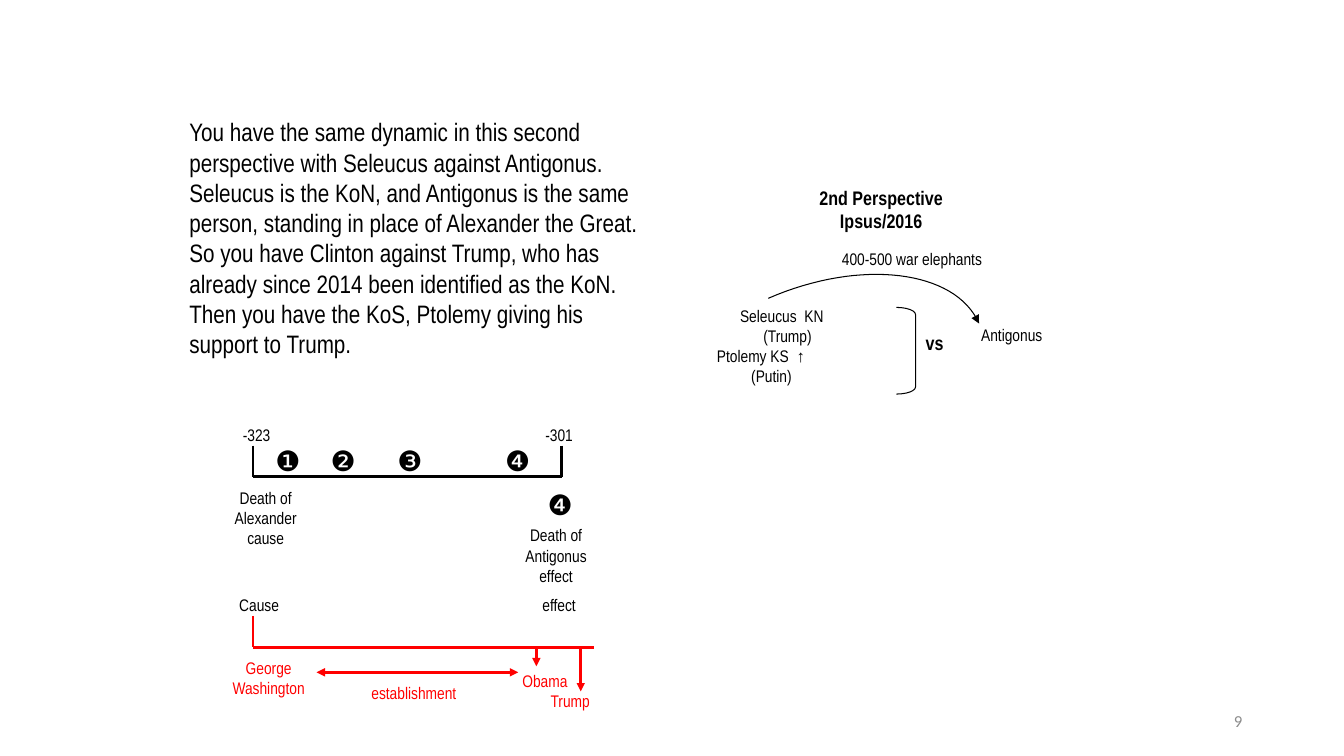
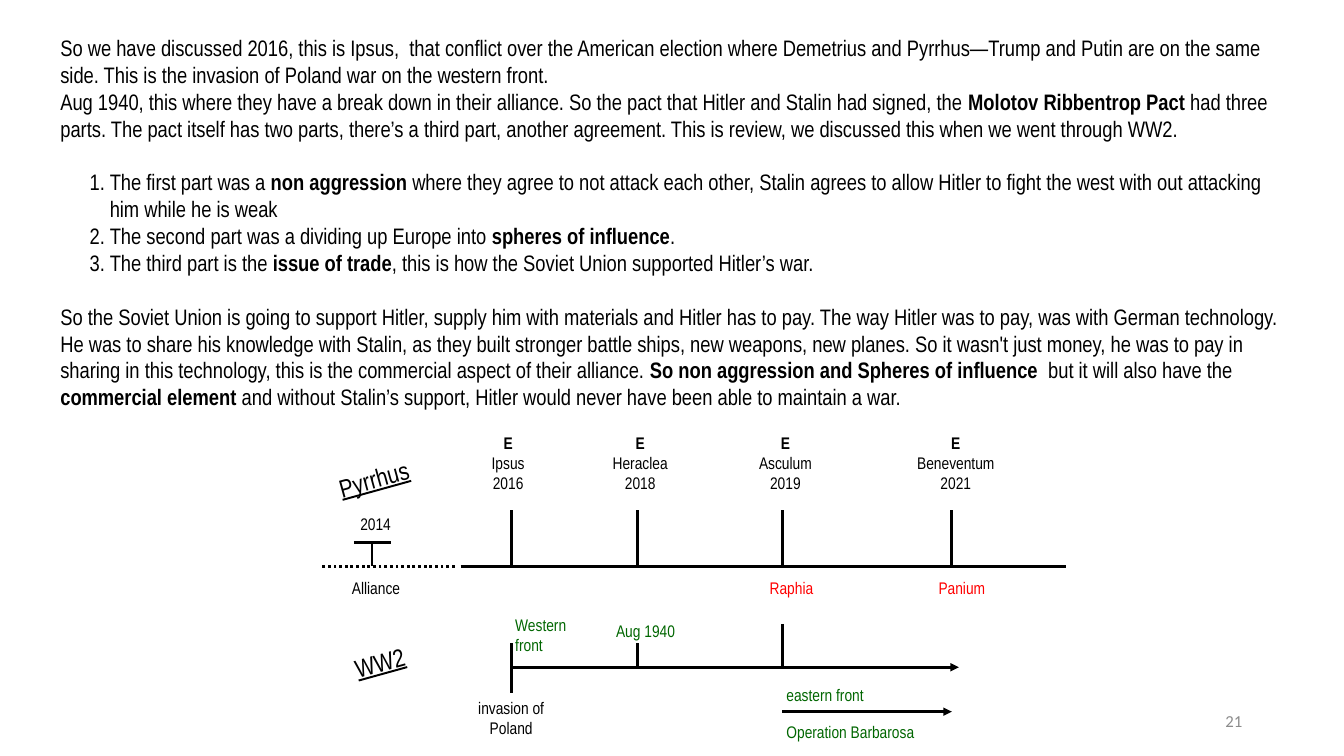
"""Build two slides of battle timelines with commentary."""
from pptx import Presentation
from pptx.dml.color import RGBColor
from pptx.enum.dml import MSO_LINE
from pptx.enum.shapes import MSO_CONNECTOR, MSO_SHAPE
from pptx.enum.text import MSO_ANCHOR, PP_ALIGN
from pptx.oxml.ns import qn
from pptx.util import Inches, Pt
from lxml import etree

LEFT, CENTER, RIGHT = PP_ALIGN.LEFT, PP_ALIGN.CENTER, PP_ALIGN.RIGHT
MIDDLE = MSO_ANCHOR.MIDDLE
STRAIGHT = MSO_CONNECTOR.STRAIGHT
BRACKET = MSO_SHAPE.RIGHT_BRACKET
DOTTED = MSO_LINE.ROUND_DOT

THEME = {
    "black": RGBColor(0, 0, 0),
    "red": RGBColor(255, 0, 0),
    "green": RGBColor(0, 102, 0),
    "gray": RGBColor(140, 140, 140),
    "font": "Arial Narrow",
    "footer_font": "Calibri",
    "symbol_font": "Arial",
    "label": 12,
    "heading": 14,
    "notes": 16,
    "body": 18,
    "symbol": 20,
    "thin": Pt(0.75),
    "thick": Pt(2),
}


def add_text(slide, box, lines, color="black", size="label", align=CENTER,
             font="font", bold=False, inset=0.04):
    """Add a text box with one paragraph per line; ** marks bold runs."""
    shape = slide.shapes.add_textbox(*map(Inches, box))
    frame = shape.text_frame
    frame.word_wrap = True
    frame.margin_left = frame.margin_right = Inches(inset)
    frame.margin_top = frame.margin_bottom = Inches(min(inset, 0.05))
    for index, line in enumerate(lines):
        paragraph = frame.add_paragraph() if index else frame.paragraphs[0]
        paragraph.alignment = align
        paragraph.font.name = THEME[font]
        paragraph.font.size = Pt(THEME[size])
        paragraph.font.color.rgb = THEME[color]
        paragraph.font.bold = bold
        for position, part in enumerate(line.split("**")):
            if part:
                run = paragraph.add_run()
                run.text = part
                if position % 2:
                    run.font.bold = True
    return shape


def add_line(slide, start, end, color="black", arrows=()):
    """Add a straight line with arrowheads at the ends named in arrows."""
    line = slide.shapes.add_connector(STRAIGHT, *map(Inches, start + end))
    line.line.color.rgb = THEME[color]
    line.line.width = THEME["thick"]
    for arrow in arrows:
        etree.SubElement(line.line._get_or_add_ln(), qn(f"a:{arrow}"), type="triangle")
    etree.SubElement(line._element.spPr, qn("a:effectLst"))
    return line


presentation = Presentation()
presentation.slide_width = Inches(13.33)
presentation.slide_height = Inches(7.5)
slides = []
for number in ("9", "21"):
    slide = presentation.slides.add_slide(presentation.slide_layouts[6])
    footer = add_text(slide, (9.42, 6.95, 3, 0.4), [number], "gray",
                      align=RIGHT, font="footer_font", inset=0.1)
    footer.text_frame.vertical_anchor = MIDDLE
    slides.append(slide)
perspective, alliance = slides

add_text(perspective, (1.78, 1.11, 4.67, 2.73), [
    "You have the same dynamic in this second perspective with Seleucus against Antigonus.",
    "Seleucus is the KoN, and Antigonus is the same person, standing in place of Alexander "
    "the Great. So you have Clinton against Trump, who has already since 2014 been "
    "identified as the KoN. Then you have the KoS, Ptolemy giving his support to Trump.",
], size="body", align=LEFT, inset=0.1)

add_text(perspective, (6.82, 1.8, 3.84, 0.59), ["2nd Perspective", "Ipsus/2016"],
         size="heading", bold=True)
add_text(perspective, (9.14, 3.24, 0.42, 0.41), ["vs"], size="heading", align=LEFT, bold=True)
allies = add_text(perspective, (7.07, 2.99, 1.75, 0.95),
                  ["Seleucus  KN", "(Trump)", "Ptolemy KS  **↑**", "(Putin)"], align=LEFT)
for paragraph, indent in zip(allies.text_frame.paragraphs, (0.23, 0.46, 0, 0.34)):
    paragraph._p.get_or_add_pPr().set("marL", str(Inches(indent)))

bracket = perspective.shapes.add_shape(BRACKET, *map(Inches, (8.89, 3.05, 0.19, 0.86)))
bracket.adjustments[0] = 0.37

controls = ((7.62, 2.96), (8.54, 2.56), (9.48, 2.68), (9.71, 3.21))
steps = 32
curve = []
for step in range(steps + 1):
    t = step / steps
    weights = ((1 - t) ** 3, 3 * t * (1 - t) ** 2, 3 * t ** 2 * (1 - t), t ** 3)
    curve.append(tuple(Inches(sum(weight * point[axis] for weight, point in zip(weights, controls)))
                       for axis in (0, 1)))
builder = perspective.shapes.build_freeform(*curve[0])
builder.add_line_segments(curve[1:], close=False)
arc = builder.convert_to_shape()
for shape in (bracket, arc):
    shape.shadow.inherit = False
    shape.fill.background()
    shape.line.color.rgb = THEME["black"]
    shape.line.width = THEME["thin"]
etree.SubElement(arc.line._get_or_add_ln(), qn("a:tailEnd"), type="triangle")

for start, end, color, arrows in (
    ((2.51, 4.73), (5.57, 4.73), "black", ()),
    ((2.51, 4.42), (2.51, 4.73), "black", ()),
    ((5.57, 4.42), (5.57, 4.73), "black", ()),
    ((2.51, 6.42), (5.89, 6.42), "red", ()),
    ((2.51, 6.11), (2.51, 6.42), "red", ()),
    ((3.14, 6.67), (5.14, 6.67), "red", ("headEnd", "tailEnd")),
    ((5.32, 6.42), (5.32, 6.61), "red", ("tailEnd",)),
    ((5.76, 6.42), (5.76, 6.86), "red", ("tailEnd",)),
):
    add_line(perspective, start, end, color, arrows)

for symbol, left, top in (("❶", 2.69, 4.36), ("❷", 3.24, 4.36), ("❸", 3.9, 4.36),
                          ("❹", 4.97, 4.36), ("❹", 5.39, 4.8)):
    add_text(perspective, (left, top, 0.31, 0.38), [symbol],
             size="symbol", align=LEFT, font="symbol_font")

for box, lines, color, align in (
    ((9.62, 3.18, 0.83, 0.54), ["Antigonus"], "black", CENTER),
    ((8.2, 2.43, 1.69, 0.38), ["400-500 war elephants"], "black", CENTER),
    ((2.2, 4.17, 0.69, 0.25), ["-323"], "black", CENTER),
    ((5.2, 4.17, 0.69, 0.25), ["-301"], "black", CENTER),
    ((2.26, 4.8, 0.75, 0.69), ["Death of", "Alexander", "cause"], "black", CENTER),
    ((5.14, 5.17, 0.75, 0.69), ["Death of", "Antigonus", "effect"], "black", CENTER),
    ((2.26, 5.86, 0.62, 0.25), ["Cause"], "black", CENTER),
    ((5.2, 5.86, 0.69, 0.25), ["effect"], "black", CENTER),
    ((2.26, 6.48, 0.81, 0.69), ["George", "Washington"], "red", CENTER),
    ((3.26, 6.73, 1.69, 0.38), ["establishment"], "red", CENTER),
    ((5.14, 6.61, 0.75, 0.25), ["Obama"], "red", LEFT),
    ((5.14, 6.81, 0.75, 0.25), ["Trump"], "red", RIGHT),
):
    add_text(perspective, box, lines, color, align=align)

notes = add_text(alliance, (0.5, 0.29, 12.32, 4.07), [
    "So we have discussed 2016, this is Ipsus,  that conflict over the American election where "
    "Demetrius and Pyrrhus—Trump and Putin are on the same side. This is the invasion of Poland "
    "war on the western front.",
    "Aug 1940, this where they have a break down in their alliance. So the pact that Hitler and "
    "Stalin had signed, the **Molotov Ribbentrop Pact **had three parts. The pact itself has two "
    "parts, there’s a third part, another agreement. This is review, we discussed this when we "
    "went through WW2.",
    "The first part was a **non aggression **where they agree to not attack each other, Stalin "
    "agrees to allow Hitler to fight the west with out attacking him while he is weak",
    "The second part was a dividing up Europe into **spheres of influence**.",
    "The third part is the **issue of trade**, this is how the Soviet Union supported Hitler’s war.",
    "So the Soviet Union is going to support Hitler, supply him with materials and Hitler has to "
    "pay. The way Hitler was to pay, was with German technology. He was to share his knowledge "
    "with Stalin, as they built stronger battle ships, new weapons, new planes. So it wasn't just "
    "money, he was to pay in sharing in this technology, this is the commercial aspect of their "
    "alliance. **So non aggression and Spheres of influence  **but it will also have the "
    "**commercial element **and without Stalin’s support, Hitler would never have been able to "
    "maintain a war.",
], size="notes", align=LEFT, inset=0.1)
paragraphs = notes.text_frame.paragraphs
for paragraph in (paragraphs[2], paragraphs[5]):
    paragraph.space_before = Pt(19.2)
for paragraph in paragraphs[2:5]:
    properties = paragraph._p.get_or_add_pPr()
    properties.set("marL", str(Inches(0.49)))
    properties.set("indent", str(Inches(-0.2)))
    numbering = etree.Element(qn("a:buAutoNum"), type="arabicPeriod")
    properties.find(qn("a:defRPr")).addprevious(numbering)

for tick, left, battle, year in ((5.07, 4.57, "Ipsus", "2016"), (6.32, 5.88, "Heraclea", "2018"),
                                 (7.76, 7.32, "Asculum", "2019"), (9.44, 9.01, "Beneventum", "2021")):
    add_line(alliance, (tick, 5.06), (tick, 5.62))
    add_text(alliance, (left, 4.25, 0.94, 0.81), ["**E**", battle, year])

for start, end, arrows in (
    ((4.57, 5.62), (10.57, 5.62), ()),
    ((3.69, 5.38), (3.69, 5.62), ()),
    ((3.51, 5.38), (3.88, 5.38), ()),
    ((5.07, 6.38), (5.07, 6.88), ()),
    ((6.32, 6.38), (6.32, 6.62), ()),
    ((7.76, 6.19), (7.76, 6.62), ()),
    ((5.07, 6.62), (9.51, 6.62), ("tailEnd",)),
    ((7.76, 7.06), (9.44, 7.06), ("tailEnd",)),
):
    add_line(alliance, start, end, arrows=arrows)
add_line(alliance, (4.51, 5.62), (3.19, 5.62)).line.dash_style = DOTTED

for box, name in (((3.01, 4.56, 1.41, 0.44), "Pyrrhus"), ((3.07, 6.38, 1.41, 0.44), "WW2")):
    title = add_text(alliance, box, [name], size="body")
    title.rotation = 344.5
    title.text_frame.paragraphs[0].font.underline = True

for box, lines, color, align in (
    ((3.38, 5.06, 0.69, 0.25), ["2014"], "black", CENTER),
    ((3.26, 5.69, 0.94, 0.31), ["Alliance"], "black", CENTER),
    ((7.38, 5.69, 0.94, 0.31), ["Raphia"], "red", CENTER),
    ((9.07, 5.69, 0.94, 0.31), ["Panium"], "red", CENTER),
    ((4.63, 6.88, 0.88, 0.5), ["invasion of", "Poland"], "black", CENTER),
    ((5.07, 6.06, 0.69, 0.5), ["Western", "front"], "green", LEFT),
    ((6.07, 6.12, 0.69, 0.32), ["Aug 1940"], "green", LEFT),
    ((7.76, 6.75, 1.06, 0.31), ["eastern front"], "green", LEFT),
    ((7.76, 7.12, 1.56, 0.31), ["Operation Barbarosa"], "green", LEFT),
):
    add_text(alliance, box, lines, color, align=align)

presentation.save("out.pptx")
